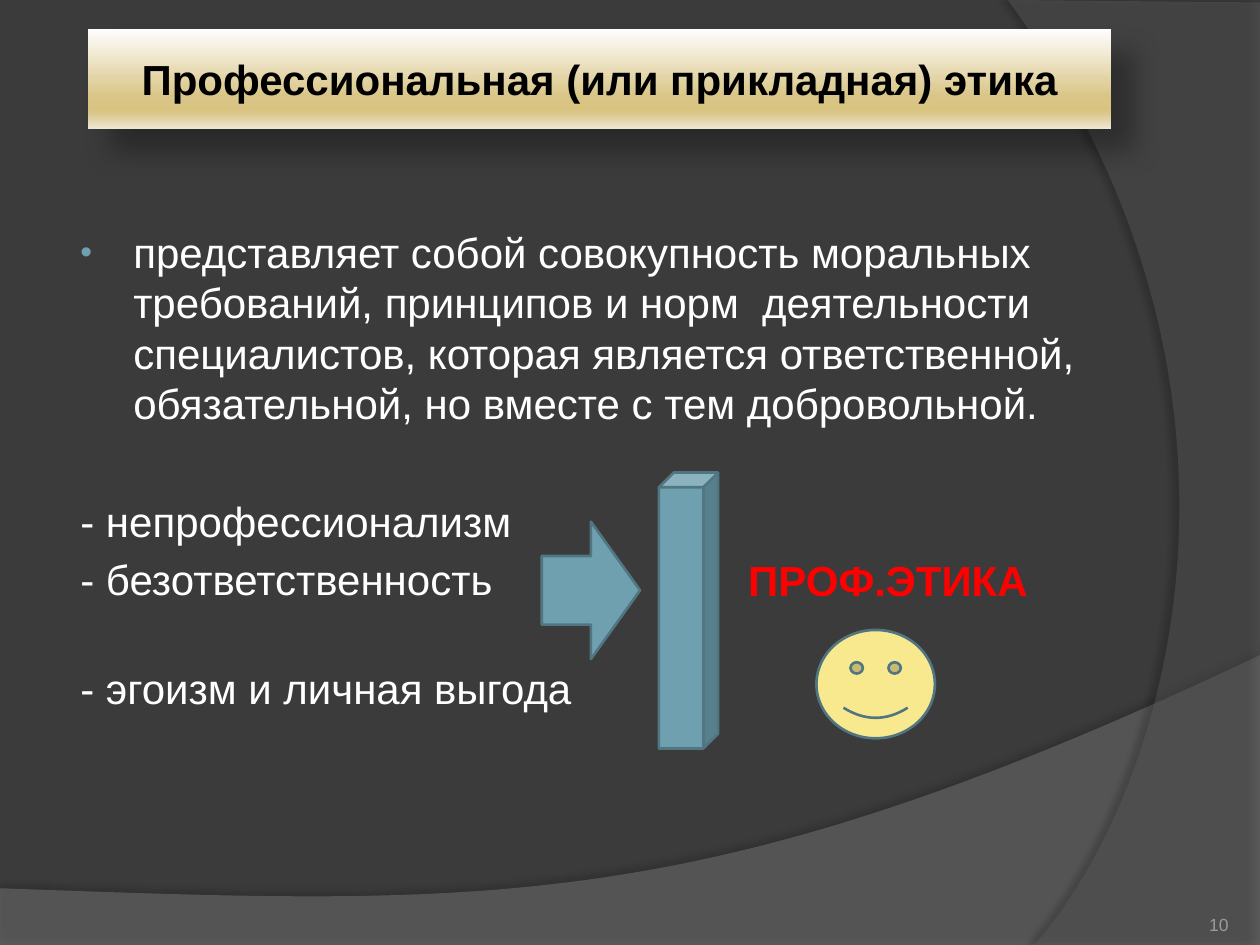
from dataclasses import dataclass

from lxml import etree
from pptx import Presentation
from pptx.dml.color import RGBColor
from pptx.enum.shapes import MSO_SHAPE
from pptx.enum.text import MSO_ANCHOR, PP_ALIGN
from pptx.oxml.ns import qn
from pptx.util import Inches, Pt

RECT, ARROW = MSO_SHAPE.RECTANGLE, MSO_SHAPE.RIGHT_ARROW
CUBE, SMILEY = MSO_SHAPE.CUBE, MSO_SHAPE.SMILEY_FACE
TOP, MIDDLE, BOTTOM = MSO_ANCHOR.TOP, MSO_ANCHOR.MIDDLE, MSO_ANCHOR.BOTTOM
LEFT, CENTER, RIGHT = PP_ALIGN.LEFT, PP_ALIGN.CENTER, PP_ALIGN.RIGHT


@dataclass(frozen=True)
class Theme:
    font: str = "Arial"
    text_size: float = 24
    number_size: float = 10
    line_height: float = 28.75
    para_gap: float = 4.8
    background: str = "3B3B3B"
    wave: str = "7F7F7F"
    arc: str = "5E5E5E"
    text: str = "FFFFFF"
    title: str = "000000"
    warning: str = "FF0000"
    number: str = "9D9B9A"
    accent: str = "6EA0B0"
    outline: str = "517682"
    face: str = "F9E98E"
    title_stops: tuple = ((0, "FFFEFE"), (68, "D9C587"), (81, "D8C381"),
                          (86, "DBC990"), (100, "EFE7D3"))


THEME = Theme()


def rgb(value):
    return RGBColor.from_string(value)


def add_xml(parent, tag, **attrs):
    return etree.SubElement(parent, qn(tag), {k: str(v) for k, v in attrs.items()})


def set_shadow(sp, opacity, blur, dist, angle):
    sp.shadow.inherit = False
    effects = sp._element.spPr.find(qn("a:effectLst"))
    outer = add_xml(effects, "a:outerShdw", blurRad=Pt(blur), dist=Pt(dist),
                    dir=angle * 60000, algn="ctr", rotWithShape=0)
    color = add_xml(outer, "a:srgbClr", val="000000")
    add_xml(color, "a:alpha", val=opacity * 1000)


def set_frame(tf, anchor, inset_x, inset_y):
    tf.word_wrap = True
    tf.vertical_anchor = anchor
    tf.margin_left = tf.margin_right = Inches(inset_x)
    tf.margin_top = tf.margin_bottom = Inches(inset_y)


def format_text(p, color, size=THEME.text_size, bold=False, align=LEFT):
    p.alignment = align
    for r in p.runs:
        r.font.name = THEME.font
        r.font.size = Pt(size)
        r.font.bold = bold
        r.font.color.rgb = rgb(color)


def add_text(s, box, text, color, anchor=TOP, insets=(0.1, 0.05), **style):
    tf = s.shapes.add_textbox(*map(Inches, box)).text_frame
    set_frame(tf, anchor, *insets)
    tf.text = text
    format_text(tf.paragraphs[0], color, **style)
    return tf.paragraphs[0]


def curve(start, c1, c2, end, steps=60):
    """Points of a cubic curve after its start."""
    points = []
    for i in range(1, steps + 1):
        t = i / steps
        u = 1 - t
        weights = (u ** 3, 3 * u * u * t, 3 * u * t * t, t ** 3)
        points.append(tuple(sum(w * q[axis] for w, q in zip(weights, (start, c1, c2, end)))
                            for axis in (0, 1)))
    return points


def add_swoosh(s, points, color, opacity, shadow):
    emu = [(Inches(x), Inches(y)) for x, y in points]
    builder = s.shapes.build_freeform(*emu[0])
    builder.add_line_segments(emu[1:], close=True)
    sp = builder.convert_to_shape()
    sp.fill.solid()
    sp.fill.fore_color.rgb = rgb(color)
    add_xml(sp._element.spPr.find(".//" + qn("a:srgbClr")), "a:alpha", val=opacity * 1000)
    sp.line.fill.background()
    set_shadow(sp, *shadow)


def add_backdrop(s, width, height):
    s.background.fill.solid()
    s.background.fill.fore_color.rgb = rgb(THEME.background)
    # Wave along the bottom
    wave_end = (width, 5.2)
    add_swoosh(s, [(0, height), (width, height), wave_end]
               + curve(wave_end, (5.59, 7.29), (3.91, 7.19), (0, 7.05)),
               THEME.wave, 45, (35, 4, 3.5, 270))
    # Arc along the right side
    arc_start = (8.21, height)
    add_swoosh(s, [(width, 0.02), (width, height), arc_start]
               + curve(arc_start, (9.35, 6.19), (10.18, 3), (8, 0)),
               THEME.arc, 40, (45, 4, 4, 180))


def add_title(s, box, text):
    sp = s.shapes.add_shape(RECT, *map(Inches, box))
    sp.fill.gradient()
    sp.fill.gradient_angle = 270
    stops = sp._element.spPr.find(".//" + qn("a:gsLst"))
    for stop in list(stops):
        stops.remove(stop)
    for pos, color in THEME.title_stops:
        add_xml(add_xml(stops, "a:gs", pos=pos * 1000), "a:srgbClr", val=color)
    sp.line.fill.background()
    set_shadow(sp, 30, 15, 18, 45)
    set_frame(sp.text_frame, MIDDLE, 0.05, 0.05)
    sp.text_frame.text = text
    format_text(sp.text_frame.paragraphs[0], THEME.title, bold=True, align=CENTER)


def add_body(s, box, definition, vices):
    tf = s.shapes.add_textbox(*map(Inches, box)).text_frame
    set_frame(tf, TOP, 0.1, 0.05)
    # Each item is its text and the number of free lines above it
    for i, (text, free_lines) in enumerate([(definition, 0)] + vices):
        p = tf.add_paragraph() if i else tf.paragraphs[0]
        p.text = text
        p_pr = p._p.get_or_add_pPr()
        p_pr.set("marL", str(Inches(0.46)))
        p_pr.set("indent", str(-Inches(0.42)))
        if i:
            add_xml(p_pr, "a:buNone")
            p.space_before = Pt(THEME.para_gap + free_lines * THEME.line_height)
        else:
            add_xml(add_xml(p_pr, "a:buClr"), "a:srgbClr", val=THEME.accent)
            add_xml(p_pr, "a:buSzPct", val=80000)
            add_xml(p_pr, "a:buFont", typeface=THEME.font)
            add_xml(p_pr, "a:buChar", char="•")
        p.line_spacing = Pt(THEME.line_height)
        format_text(p, THEME.text)


def add_barrier(s, x, y):
    """Arrow stopped by a wall, with the label and the face behind it."""
    parts = [(ARROW, (0, 0.39, 0.78, 1.09), THEME.accent),
             (CUBE, (0.93, 0, 0.47, 2.19), THEME.accent),
             (SMILEY, (2.18, 1.25, 0.94, 0.86), THEME.face)]
    for kind, (dx, dy, w, h), color in parts:
        sp = s.shapes.add_shape(kind, *map(Inches, (x + dx, y + dy, w, h)))
        sp.shadow.inherit = False
        sp.fill.solid()
        sp.fill.fore_color.rgb = rgb(color)
        sp.line.color.rgb = rgb(THEME.outline)
        sp.line.width = Pt(1.5)
    label = add_text(s, (x + 1.54, y + 0.6, 2.6, 0.5), "ПРОФ.ЭТИКА", THEME.warning, bold=True)
    label.line_spacing = Pt(THEME.line_height)


def main():
    prs = Presentation()
    prs.slide_width, prs.slide_height = Inches(10), Inches(7.5)
    s = prs.slides.add_slide(prs.slide_layouts[6])
    add_backdrop(s, 10, 7.5)
    add_title(s, (0.7, 0.23, 8.12, 0.79), "Профессиональная (или прикладная) этика")
    add_body(s, (0.5, 1.75, 8.17, 4.95),
             "представляет собой совокупность моральных требований, принципов и норм  "
             "деятельности специалистов, которая является ответственной, обязательной, "
             "но вместе с тем добровольной.",
             [("- непрофессионализм", 1.17), ("- безответственность", 0),
              ("- эгоизм и личная выгода", 1)])
    # Slide number
    add_text(s, (8.92, 7.02, 0.83, 0.4), "10", THEME.number, anchor=BOTTOM,
             insets=(0, 0), size=THEME.number_size, align=RIGHT)
    add_barrier(s, 4.3, 3.75)
    prs.save("out.pptx")


if __name__ == "__main__":
    main()
